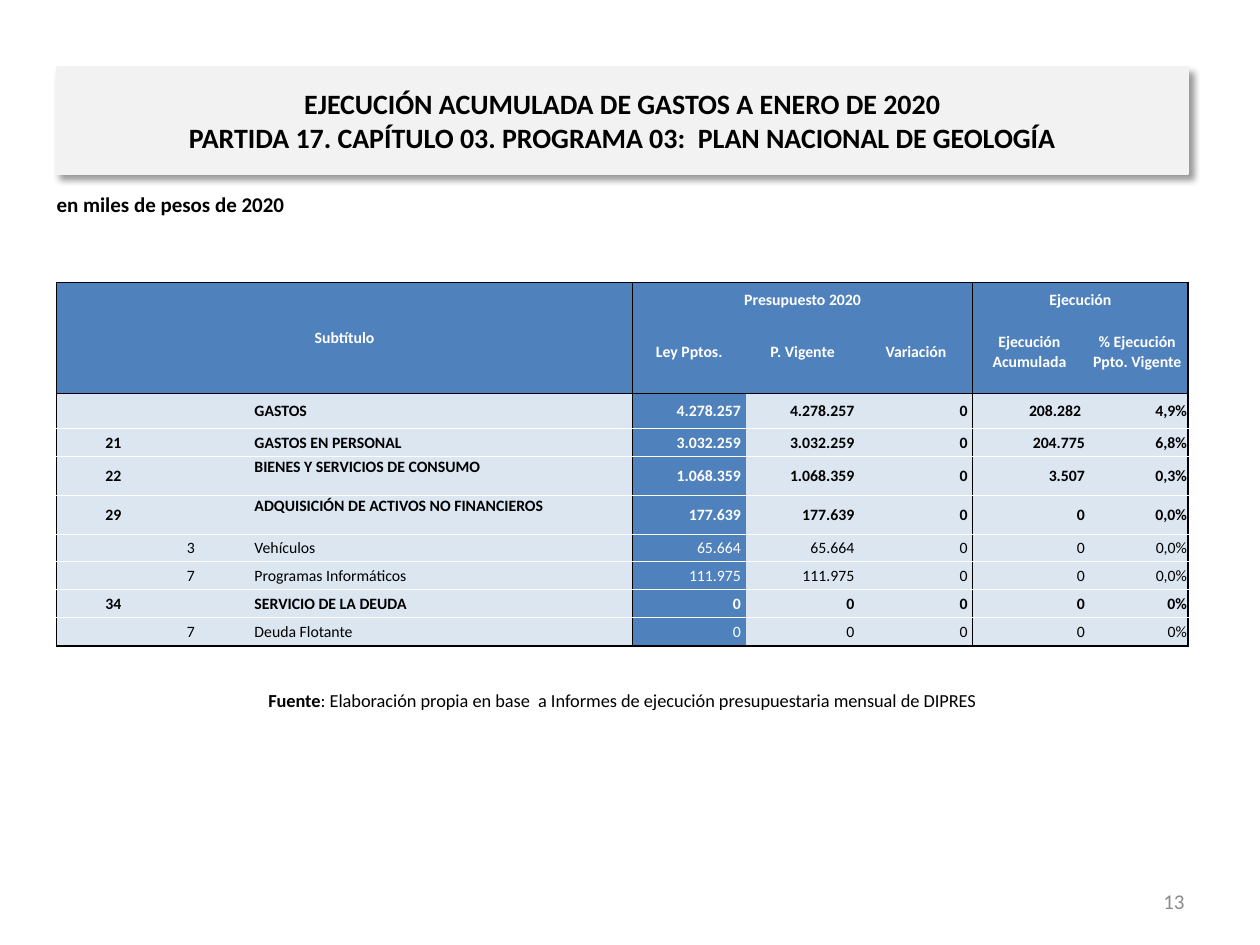
from lxml import etree
from pptx import Presentation
from pptx.dml.color import RGBColor
from pptx.enum.shapes import MSO_SHAPE
from pptx.enum.text import MSO_ANCHOR, PP_ALIGN
from pptx.oxml.ns import qn
from pptx.util import Inches, Pt

RECTANGLE = MSO_SHAPE.RECTANGLE
LEFT, CENTER, RIGHT, JUSTIFY = PP_ALIGN.LEFT, PP_ALIGN.CENTER, PP_ALIGN.RIGHT, PP_ALIGN.JUSTIFY
TOP, MIDDLE, BOTTOM = MSO_ANCHOR.TOP, MSO_ANCHOR.MIDDLE, MSO_ANCHOR.BOTTOM

SLIDE_WIDTH, SLIDE_HEIGHT = Inches(10), Inches(7.5)
FONT = "Calibri"
BLACK, WHITE, GRAY = "000000", "FFFFFF", "8C8C8C"
BLUE, PALE_BLUE, PANEL = "4F81BD", "DCE6F1", "F2F2F2"

COLUMN_SHARES = [9, 3.3, 3.3, 30.1, 9, 9, 9, 9, 8.1]
ROW_SHARES = [2.93, 8.8, 3.73, 2.93, 4.13, 4.13, 2.93, 2.93, 2.93, 3.07]
LAST_ROW, LAST_COLUMN = len(ROW_SHARES) - 1, len(COLUMN_SHARES) - 1
FIRST_BODY_ROW = 2
LABEL_COLUMN, LAW_COLUMN, VARIATION_COLUMN, EXECUTED_COLUMN = 3, 4, 6, 7
TALL_ROWS = (4, 5)

HEADERS = [
    ("Subtítulo", 0, 0, 1, 3, MIDDLE),
    ("Presupuesto 2020", 0, 4, 0, 6, BOTTOM),
    ("Ejecución", 0, 7, 0, 8, BOTTOM),
    ("Ley Pptos.", 1, 4, 1, 4, MIDDLE),
    ("P. Vigente", 1, 5, 1, 5, MIDDLE),
    ("Variación", 1, 6, 1, 6, MIDDLE),
    ("Ejecución Acumulada", 1, 7, 1, 7, MIDDLE),
    ("% Ejecución Ppto. Vigente", 1, 8, 1, 8, MIDDLE),
]
EXPENSES = [
    ("", "", "GASTOS", "4.278.257", "4.278.257", "0", "208.282", "4,9%"),
    ("21", "", "GASTOS EN PERSONAL", "3.032.259", "3.032.259", "0", "204.775", "6,8%"),
    ("22", "", "BIENES Y SERVICIOS DE CONSUMO", "1.068.359", "1.068.359", "0", "3.507", "0,3%"),
    ("29", "", "ADQUISICIÓN DE ACTIVOS NO FINANCIEROS", "177.639", "177.639", "0", "0", "0,0%"),
    ("", "3", "Vehículos", "65.664", "65.664", "0", "0", "0,0%"),
    ("", "7", "Programas Informáticos", "111.975", "111.975", "0", "0", "0,0%"),
    ("34", "", "SERVICIO DE LA DEUDA", "0", "0", "0", "0", "0%"),
    ("", "7", "Deuda Flotante", "0", "0", "0", "0", "0%"),
]


def color(hex_code):
    """Turn a hex string into a colour."""
    return RGBColor.from_string(hex_code)


def across(percent):
    """Return a share of the slide's width."""
    return round(SLIDE_WIDTH * percent / 100)


def down(percent):
    """Return a share of the slide's height."""
    return round(SLIDE_HEIGHT * percent / 100)


def place(left, top, width, height):
    """Turn shares of the slide into a position and size."""
    return across(left), down(top), across(width), down(height)


def write(frame, *pieces, size=9, ink=BLACK, bold=False, align=LEFT):
    """Write text pieces in one paragraph; a piece may be a (text, bold) pair."""
    paragraph = frame.paragraphs[0]
    paragraph.alignment = align
    for piece in pieces:
        words, weight = piece if isinstance(piece, tuple) else (piece, bold)
        for index, line in enumerate(words.split("\n")):
            if index:
                paragraph.add_line_break()
            run = paragraph.add_run()
            run.text = line
            run.font.name, run.font.size, run.font.bold = FONT, Pt(size), weight
            run.font.color.rgb = color(ink)


def add_note(slide, area, *pieces, anchor=MIDDLE, **style):
    """Add a wrapped text box."""
    frame = slide.shapes.add_textbox(*place(*area)).text_frame
    frame.word_wrap = True
    frame.vertical_anchor = anchor
    write(frame, *pieces, **style)


def add_title(slide, area, words):
    """Add the title panel with its soft shadow."""
    panel = slide.shapes.add_shape(RECTANGLE, *place(*area))
    panel.shadow.inherit = False
    panel.fill.solid()
    panel.fill.fore_color.rgb = panel.line.color.rgb = color(PANEL)
    panel.line.width = Pt(0.75)
    effects = panel._element.spPr.find(qn("a:effectLst"))
    shade = etree.SubElement(effects, qn("a:outerShdw"), blurRad=str(Pt(4)), dist=str(Pt(3)),
                             dir="2700000", algn="tl", rotWithShape="0")
    tint = etree.SubElement(shade, qn("a:srgbClr"), val=BLACK)
    etree.SubElement(tint, qn("a:alpha"), val="40000")
    panel.text_frame.word_wrap = True
    panel.text_frame.vertical_anchor = MIDDLE
    write(panel.text_frame, words, size=16, bold=True, align=CENTER)


def border_rules(top, left, bottom, right):
    """Give the line on each side of a cell range as (colour, points) or None."""
    thick, thin, pale = (BLACK, 1), (BLACK, 0.5), (WHITE, 0.5)
    group_starts, group_ends = (LAW_COLUMN, EXECUTED_COLUMN), (LABEL_COLUMN, VARIATION_COLUMN)
    return {
        "a:lnL": thick if left == 0 else thin if left in group_starts else None,
        "a:lnR": thick if right == LAST_COLUMN else thin if right in group_ends else None,
        "a:lnT": {0: thick, 1: None, FIRST_BODY_ROW: thin}.get(top, pale),
        "a:lnB": {0: None, 1: thin, LAST_ROW: thick}.get(bottom, pale),
    }


def style_cell(cell, span, background, anchor=MIDDLE, right_margin=0.01):
    """Set a cell's borders, fill, margins and anchor."""
    properties = cell._tc.get_or_add_tcPr()
    for side, rule in border_rules(*span).items():
        edge = etree.SubElement(properties, qn(side))
        if rule:
            edge.set("w", str(Pt(rule[1])))
            paint = etree.SubElement(edge, qn("a:solidFill"))
            etree.SubElement(paint, qn("a:srgbClr"), val=rule[0])
        else:
            etree.SubElement(edge, qn("a:noFill"))
    cell.fill.solid()
    cell.fill.fore_color.rgb = color(background)
    cell.margin_left = cell.margin_top = Inches(0.01)
    cell.margin_right, cell.margin_bottom = Inches(right_margin), 0
    cell.vertical_anchor = anchor


def fill_header(grid):
    """Fill the two header rows and merge their spans."""
    for words, top, left, bottom, right, anchor in HEADERS:
        cell = grid.cell(top, left)
        if (top, left) != (bottom, right):
            cell.merge(grid.cell(bottom, right))
        style_cell(cell, (top, left, bottom, right), BLUE, anchor)
        write(cell.text_frame, words, ink=WHITE, bold=True, align=CENTER)


def fill_expense(grid, row, expense):
    """Fill one row of the budget."""
    code, item, label, *amounts = expense
    for column, words in enumerate([code, item, "", label, *amounts]):
        cell = grid.cell(row, column)
        is_law = column == LAW_COLUMN
        is_label = column == LABEL_COLUMN
        spaced = LAW_COLUMN <= column <= VARIATION_COLUMN or (
            column == EXECUTED_COLUMN and row == FIRST_BODY_ROW)
        style_cell(cell, (row, column, row, column), BLUE if is_law else PALE_BLUE,
                   TOP if is_label and row in TALL_ROWS else MIDDLE, 0.04 if spaced else 0.01)
        if words:
            align = JUSTIFY if is_label else CENTER if column < LABEL_COLUMN else RIGHT
            write(cell.text_frame, words, ink=WHITE if is_law else BLACK,
                  bold=not item, align=align)


def add_budget(slide, left, top):
    """Add the budget table."""
    area = place(left, top, sum(COLUMN_SHARES), sum(ROW_SHARES))
    grid = slide.shapes.add_table(len(ROW_SHARES), len(COLUMN_SHARES), *area).table
    grid.first_row = grid.horz_banding = False
    for column, share in zip(grid.columns, COLUMN_SHARES):
        column.width = across(share)
    for row, share in zip(grid.rows, ROW_SHARES):
        row.height = down(share)
    fill_header(grid)
    for row, expense in enumerate(EXPENSES, FIRST_BODY_ROW):
        fill_expense(grid, row, expense)
    for cell in grid.iter_cells():
        etree.SubElement(cell.text_frame.paragraphs[0]._p, qn("a:endParaRPr"), sz="900")


def main():
    """Build the budget slide and save it."""
    deck = Presentation()
    deck.slide_width, deck.slide_height = SLIDE_WIDTH, SLIDE_HEIGHT
    slide = deck.slides.add_slide(deck.slide_layouts[6])
    add_note(slide, (4.5, 72, 89.8, 4.13), ("Fuente", True),
             ": Elaboración propia en base  a Informes de ejecución presupuestaria mensual de DIPRES",
             size=10.5, align=CENTER)
    add_note(slide, (71.7, 92.67, 23.3, 5.33), "13", size=12, ink=GRAY, align=RIGHT)
    add_note(slide, (3.5, 19.6, 81.5, 5.2), "en miles de pesos de 2020",
             anchor=TOP, size=12, bold=True)
    add_title(slide, (4.5, 7.1, 89.8, 11.3), "EJECUCIÓN ACUMULADA DE GASTOS A ENERO DE 2020\n"
              "PARTIDA 17. CAPÍTULO 03. PROGRAMA 03:  PLAN NACIONAL DE GEOLOGÍA")
    add_budget(slide, 4.5, 29.87)
    deck.save("out.pptx")


if __name__ == "__main__":
    main()
